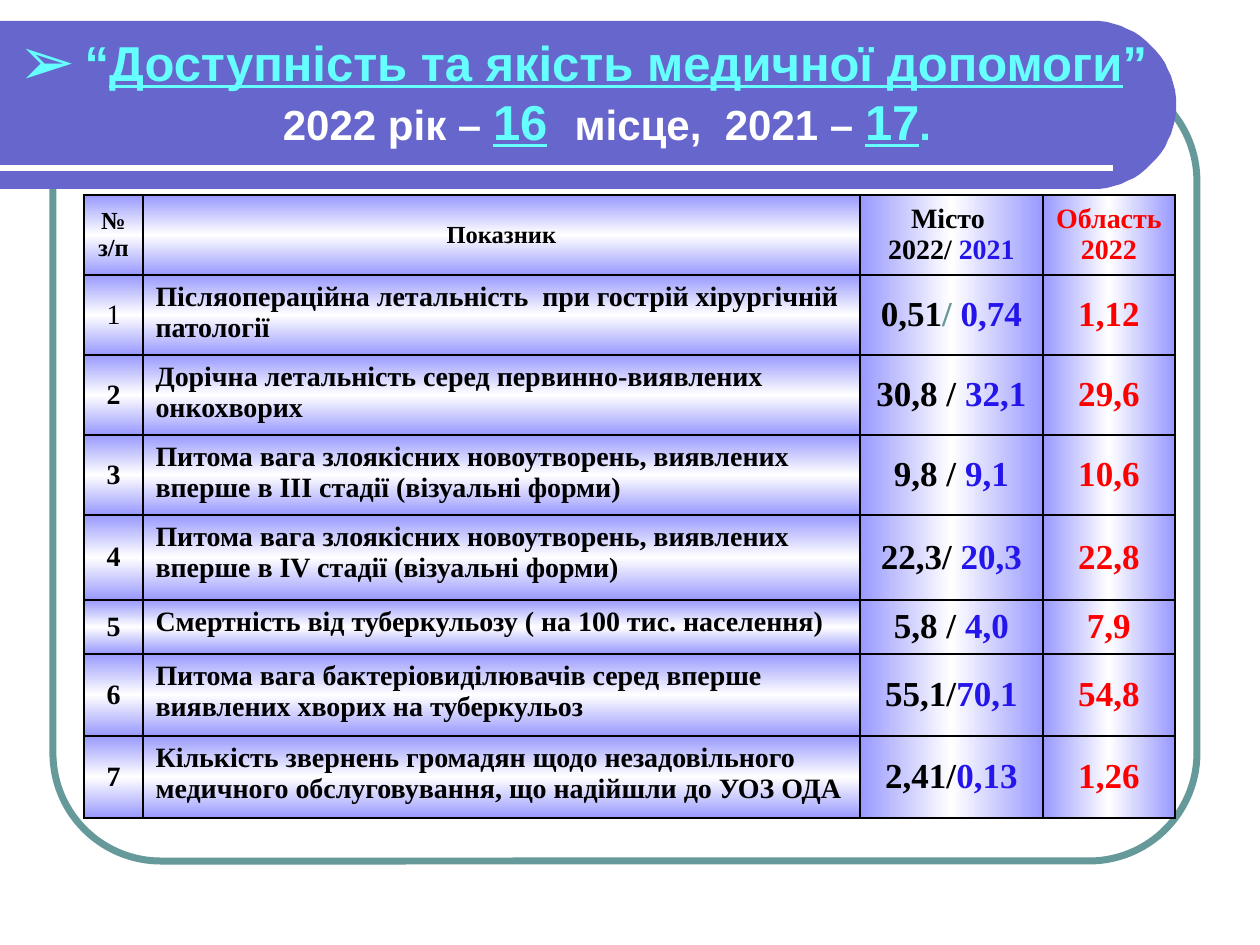
import math
from lxml import etree
from pptx import Presentation
from pptx import util as u
from pptx.dml.color import RGBColor
from pptx.enum import shapes, text
from pptx.oxml import parse_xml
from pptx.oxml.ns import nsdecls, qn

PX = 914400 / 126
HEX = {"teal": "669999", "band": "6666CC", "white": "FFFFFF", "black": "000000",
       "lilac": "9999FF", "blue": "2415EB", "red": "FF0000", "cyan": "66FFFF"}
SERIF = "Times New Roman"

COLS = [59, 717, 183, 132]
ROWS = [80, 80, 80, 80, 85, 54, 82, 82]
# indicator, city 2022 with its separator, city 2021, region 2022
DATA = [
    ("Післяопераційна летальність  при гострій хірургічній патології",
     "0,51", "0,74", "1,12"),
    ("Дорічна летальність серед первинно-виявлених онкохворих",
     "30,8 / ", "32,1", "29,6"),
    ("Питома вага злоякісних новоутворень, виявлених вперше в ІІІ стадії (візуальні форми)",
     "9,8 / ", "9,1", "10,6"),
    ("Питома вага злоякісних новоутворень, виявлених вперше в ІV стадії (візуальні форми)",
     "22,3/ ", "20,3", "22,8"),
    ("Смертність від туберкульозу ( на 100 тис. населення)",
     "5,8 / ", "4,0", "7,9"),
    ("Питома вага бактеріовиділювачів серед вперше виявлених хворих на туберкульоз",
     "55,1/", "70,1", "54,8"),
    ("Кількість звернень громадян щодо незадовільного медичного обслуговування, що надійшли до УОЗ ОДА",
     "2,41/", "0,13", "1,26"),
]


def px(n):
    return u.Emu(round(n * PX))


def rgb(name):
    return RGBColor.from_string(HEX[name])


def add_run(para, words, size, color, font=SERIF, bold=True, under=False):
    run = para.add_run()
    run.text = words
    f = run.font
    f.size, f.name, f.bold, f.underline = u.Pt(size), font, bold, under
    f.color.rgb = rgb(color)


def add_frame(slide, x, y, w, h):
    frame = slide.shapes.add_shape(shapes.MSO_SHAPE.ROUNDED_RECTANGLE,
                                   px(x), px(y), px(w), px(h))
    frame.adjustments[0] = 0.137
    frame.shadow.inherit = False
    frame.fill.background()
    frame.line.color.rgb = rgb("teal")
    frame.line.width = u.Pt(4)


def add_band(slide, x, y, w, h):
    """Band with a half-round right end and a rule near its foot."""
    rad = h / 2
    arc = [(x + w - rad + rad * math.cos(math.radians(a)),
            y + rad + rad * math.sin(math.radians(a))) for a in range(-90, 91, 5)]
    form = slide.shapes.build_freeform(0, 0, scale=PX)
    form.move_to(x, y)
    form.add_line_segments(arc + [(x, y + h)], close=True)
    band = form.convert_to_shape()
    band.shadow.inherit = False
    band.fill.solid()
    band.fill.fore_color.rgb = rgb("band")
    band.line.fill.background()
    rule = slide.shapes.add_connector(shapes.MSO_CONNECTOR.STRAIGHT, px(x), px(y + 147),
                                      px(x + w - 63), px(y + 147))
    rule.line.color.rgb = rgb("white")
    rule.line.width = u.Pt(3)
    etree.SubElement(rule._element.spPr, qn("a:effectLst"))


def add_title(slide, x, y, w, h):
    title = slide.shapes.title
    title.left, title.top, title.width, title.height = px(x), px(y), px(w), px(h)
    title._element.getparent().append(title._element)  # in front of the band
    frame = title.text_frame
    frame.word_wrap = True
    frame.auto_size = text.MSO_AUTO_SIZE.NONE
    frame.vertical_anchor = text.MSO_ANCHOR.TOP
    para = frame.paragraphs[0]
    para.alignment = text.PP_ALIGN.CENTER
    props = para._p.get_or_add_pPr()
    props.set("marL", str(px(48)))
    props.set("indent", str(px(-48)))
    for tag in ('<a:spcBef {}><a:spcPct val="20000"/></a:spcBef>',
                '<a:buClr {}><a:srgbClr val="%s"/></a:buClr>' % HEX["cyan"],
                '<a:buSzPct {} val="195000"/>',
                '<a:buFont {} typeface="Arial"/>',
                '<a:buChar {} char="➢"/>'):
        props.append(parse_xml(tag.format(nsdecls("a"))))
    add_run(para, " ", 20, "band", "Roboto")
    for words, size, color, under in [
            ("“", 28, "cyan", False),
            ("Доступність та якість медичної допомоги", 28, "cyan", True),
            ("” ", 28, "cyan", False),
            ("2022 рік – ", 24, "white", False),
            ("16", 28, "cyan", True),
            ("  ", 28, "cyan", False),
            ("місце,  2021 – ", 24, "white", False),
            ("17", 28, "cyan", True),
            (".", 24, "cyan", False)]:
        add_run(para, words, size, color, "Arial", under=under)


def style_cell(cell, angle):
    """Black borders and a lilac-white-lilac gradient."""
    props = cell._tc.get_or_add_tcPr()
    for side in "LRTB":
        props.append(parse_xml(
            f'<a:ln{side} {nsdecls("a")} w="12700"><a:solidFill>'
            f'<a:srgbClr val="{HEX["black"]}"/></a:solidFill></a:ln{side}>'))
    stops = "".join(f'<a:gs pos="{pos}"><a:srgbClr val="{HEX[name]}"/></a:gs>'
                    for pos, name in ((0, "lilac"), (50000, "white"), (100000, "lilac")))
    props.append(parse_xml(
        f'<a:gradFill {nsdecls("a")} rotWithShape="1"><a:gsLst>{stops}</a:gsLst>'
        f'<a:lin ang="{angle * 60000}" scaled="1"/></a:gradFill>'))


def fill_cell(cell, lines, center=True):
    """Write one paragraph for each line, a line being a list of runs."""
    frame = cell.text_frame
    for i, runs in enumerate(lines):
        para = frame.add_paragraph() if i else frame.paragraphs[0]
        para.alignment = text.PP_ALIGN.CENTER if center else text.PP_ALIGN.LEFT
        for words, size, color, *bold in runs:
            add_run(para, words, size, color, bold=not bold or bold[0])
    cell.vertical_anchor = text.MSO_ANCHOR.MIDDLE if center else text.MSO_ANCHOR.TOP


def add_grid(slide, x, y):
    grid = slide.shapes.add_table(len(ROWS), len(COLS), px(x), px(y),
                                  px(sum(COLS)), px(sum(ROWS))).table
    for col, w in zip(grid.columns, COLS):
        col.width = px(w)
    for row, h in zip(grid.rows, ROWS):
        row.height = px(h)
        for c, cell in enumerate(row.cells):
            style_cell(cell, 90 if c < 2 else 0)
    heads = [[[("№ з/п", 14, "black")]],
             [[("Показник", 14, "black")]],
             [[("Місто ", 16, "black")], [("2022/ ", 16, "black"), ("2021", 16, "blue")]],
             [[("Область 2022", 16, "red")]]]
    for c, lines in enumerate(heads):
        fill_cell(grid.cell(0, c), lines)
    for r, (name, now, past, region) in enumerate(DATA, 1):
        city = [(now, 20, "black"), (past, 20, "blue")]
        if r == 1:
            city.insert(1, ("/ ", 20, "teal"))
        fill_cell(grid.cell(r, 0), [[(str(r), 16, "black", r > 1)]])
        fill_cell(grid.cell(r, 1), [[(name, 16, "black")]], center=False)
        fill_cell(grid.cell(r, 2), [city])
        fill_cell(grid.cell(r, 3), [[(region, 20, "red")]])


def main():
    deck = Presentation()
    deck.slide_width, deck.slide_height = px(1260), px(945)
    slide = deck.slides.add_slide(deck.slide_layouts[5])
    add_frame(slide, 53, 73, 1144, 788)
    add_band(slide, 0, 21, 1176, 168)
    add_grid(slide, 84, 195)
    add_title(slide, -25, 26, 1216, 149)
    deck.save("out.pptx")


if __name__ == "__main__":
    main()
